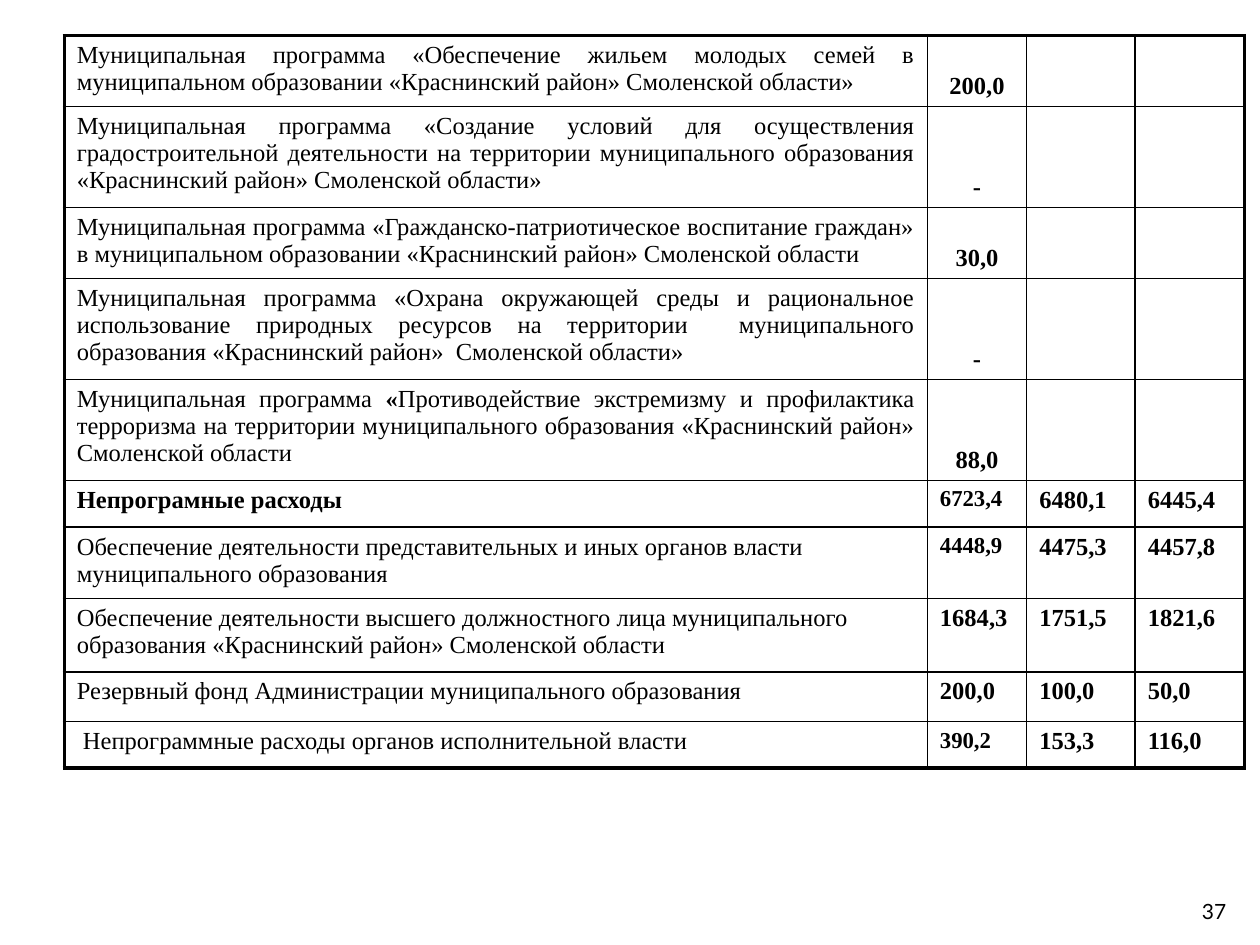
from lxml import etree
from pptx import Presentation
from pptx.dml.color import RGBColor
from pptx.enum.text import MSO_ANCHOR, PP_ALIGN
from pptx.oxml.ns import qn
from pptx.util import Pt

LEFT, CENTER, RIGHT, JUSTIFY = PP_ALIGN.LEFT, PP_ALIGN.CENTER, PP_ALIGN.RIGHT, PP_ALIGN.JUSTIFY
TOP, BOTTOM = MSO_ANCHOR.TOP, MSO_ANCHOR.BOTTOM
BLACK = "000000"
TABLE_FONT, NUMBER_FONT = "Times New Roman", "Lato"
THIN, THICK = 1, 2.25
EXPENSE_SPACING = 2.8
COLUMN_WIDTHS = [493.2, 56.8, 62, 62.4]

# Programmes: row height, runs of the name (text, bold), amount
PROGRAMMES = [
    (40.6, [("Муниципальная программа «Обеспечение жильем молодых семей в муниципальном "
             "образовании «Краснинский район» Смоленской области»", False)], "200,0"),
    (57.7, [("Муниципальная программа «Создание условий для осуществления градостроительной "
             "деятельности на территории муниципального образования «Краснинский район» "
             "Смоленской области» ", False)], "-"),
    (40.6, [("Муниципальная программа «Гражданско-патриотическое воспитание граждан» в "
             "муниципальном образовании «Краснинский район» Смоленской области", False)], "30,0"),
    (57.7, [("Муниципальная программа «Охрана окружающей среды и рациональное использование "
             "природных ресурсов на территории  муниципального образования «Краснинский район»  "
             "Смоленской области»", False)], "-"),
    (57.7, [("Муниципальная программа ", False), ("«", True),
            ("Противодействие экстремизму и профилактика терроризма на территории муниципального "
             "образования «Краснинский район» Смоленской области ", False)], "88,0"),
]

# Other expenses: row height, name, bold name, alignment, size of first amount, amounts
EXPENSES = [
    (26.6, "Непрограмные расходы", True, LEFT, 13, ["6723,4", "6480,1", "6445,4"]),
    (40.8, "Обеспечение деятельности представительных и иных органов власти муниципального "
           "образования", False, LEFT, 13, ["4448,9", "4475,3", "4457,8"]),
    (42, "Обеспечение деятельности высшего должностного лица муниципального образования "
         "«Краснинский район» Смоленской области", False, LEFT, 14, ["1684,3", "1751,5", "1821,6"]),
    (28.5, "Резервный фонд Администрации муниципального образования", False, JUSTIFY, 14,
     ["200,0", "100,0", "50,0"]),
    (26.6, " Непрограммные расходы органов исполнительной власти", False, LEFT, 13,
     ["390,2", "153,3", "116,0"]),
]


def color(value):
    return RGBColor.from_string(value)


def add_run(paragraph, text, size, font, bold=False):
    run = paragraph.add_run()
    run.text = text
    run.font.size = Pt(size)
    run.font.name = font
    run.font.bold = bold
    run.font.color.rgb = color(BLACK)


def write_cell(cell, runs, alignment, size=14, anchor=TOP, space_before=0):
    cell.vertical_anchor = anchor
    paragraph = cell.text_frame.paragraphs[0]
    paragraph.alignment = alignment
    paragraph.space_before = Pt(space_before)
    for text, bold in runs:
        add_run(paragraph, text, size, TABLE_FONT, bold)


def set_border(cell, side, width):
    properties = cell._tc.get_or_add_tcPr()
    line = etree.SubElement(properties, qn("a:ln" + side), w=str(int(Pt(width))))
    fill = etree.SubElement(line, qn("a:solidFill"))
    etree.SubElement(fill, qn("a:srgbClr"), val=BLACK)


def style_cells(table):
    """Thick outer frame, thin inner grid, no fill."""
    last_row, last_column = len(table.rows) - 1, len(table.columns) - 1
    for row in range(last_row + 1):
        for column in range(last_column + 1):
            cell = table.cell(row, column)
            outer_sides = {"L": column == 0, "R": column == last_column,
                           "T": row == 0, "B": row == last_row}
            for side, outer in outer_sides.items():
                set_border(cell, side, THICK if outer else THIN)
            cell.fill.background()


def add_budget_table(slide):
    heights = [row[0] for row in PROGRAMMES + EXPENSES]
    frame = slide.shapes.add_table(len(heights), len(COLUMN_WIDTHS), Pt(36.7), Pt(20.3),
                                   Pt(sum(COLUMN_WIDTHS)), Pt(sum(heights)))
    table = frame.table
    table.first_row = False
    table.horz_banding = False
    for column, width in zip(table.columns, COLUMN_WIDTHS):
        column.width = Pt(width)
    for row, height in zip(table.rows, heights):
        row.height = Pt(height)
    style_cells(table)

    # Municipal programmes
    for row, (_, name_runs, amount) in enumerate(PROGRAMMES):
        write_cell(table.cell(row, 0), name_runs, JUSTIFY)
        write_cell(table.cell(row, 1), [(amount, True)], CENTER, anchor=BOTTOM)

    # Expenses outside the programmes
    for row, (_, name, bold, alignment, first_size, amounts) in enumerate(EXPENSES, len(PROGRAMMES)):
        write_cell(table.cell(row, 0), [(name, bold)], alignment, space_before=EXPENSE_SPACING)
        for column, amount in enumerate(amounts, 1):
            size = first_size if column == 1 else 14
            write_cell(table.cell(row, column), [(amount, True)], LEFT, size,
                       space_before=EXPENSE_SPACING)


def add_page_number(slide, number):
    shape = slide.shapes.add_textbox(Pt(648), Pt(509.8), Pt(59.8), Pt(19.4))
    shape.text_frame.word_wrap = True
    paragraph = shape.text_frame.paragraphs[0]
    paragraph.alignment = RIGHT
    add_run(paragraph, number, 12, NUMBER_FONT)


def main():
    presentation = Presentation()
    presentation.slide_width, presentation.slide_height = Pt(720), Pt(540)
    slide = presentation.slides.add_slide(presentation.slide_layouts[6])
    add_budget_table(slide)
    add_page_number(slide, "37")
    presentation.save("out.pptx")


if __name__ == "__main__":
    main()
